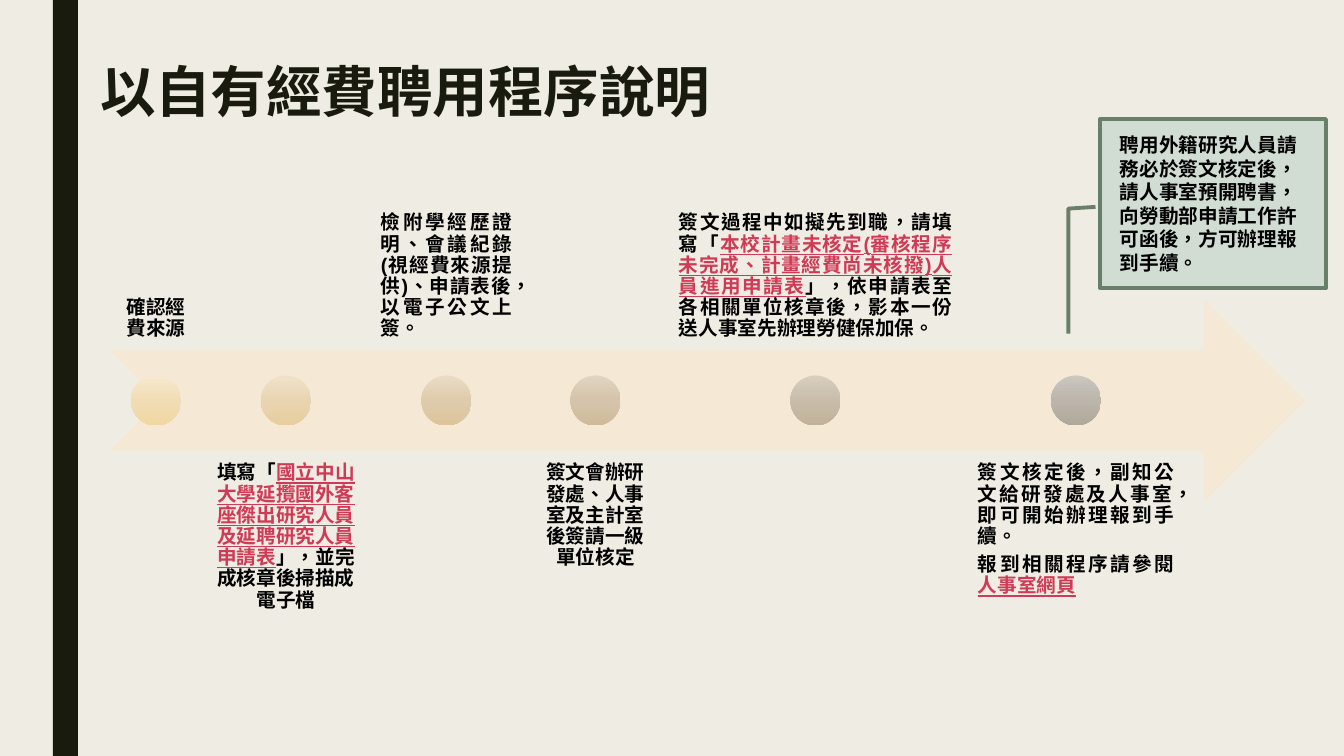
"""Builds a slide with a six-step hiring timeline and a callout."""
from copy import deepcopy

from pptx import Presentation
from pptx import util as u
from pptx.dml.color import RGBColor
from pptx.enum import lang, shapes, text

TITLE = "以自有經費聘用程序說明"
NOTE = "聘用外籍研究人員請務必於簽文核定後，請人事室預開聘書，向勞動部申請工作許可函後，方可辦理報到手續。"
DARK, BLACK, RED = "191B0E", "000000", "D13A55"
MID, FULL = text.PP_ALIGN.CENTER, text.PP_ALIGN.JUSTIFY
TOP, LOW = text.MSO_ANCHOR.TOP, text.MSO_ANCHOR.BOTTOM

# width, alignment, dot gradient, paragraphs of (words, is red)
STEPS = [
    (92, MID, ("F7E9D0", "F1DCB4", "F1D7A3"), [[("確認經費來源", False)]]),
    (160, MID, ("F0E2CA", "E9D4B0", "E8CD9E"), [[
        ("填寫「", False),
        ("國立中山大學延攬國外客座傑出研究人員及延聘研究人員申請表", True),
        ("」，並完成核章後掃描成電子檔", False)]]),
    (153, FULL, ("E9DBC6", "DFCCAD", "DCC49B"), [[
        ("檢附學經歷證明、會議紀錄(視經費來源提供)、申請表後，以電子公文上簽。", False)]]),
    (137, MID, ("E0D4C2", "D5C4AB", "CFBB99"), [[
        ("簽文會辦研發處、人事室及主計室後簽請一級單位核定", False)]]),
    (295, FULL, ("D7CEC0", "C9BDAA", "C1B198"), [[
        ("簽文過程中如擬先到職，請填寫「", False),
        ("本校計畫未核定(審核程序未完成、計畫經費尚未核撥)人員進用申請表", True),
        ("」，依申請表至各相關單位核章後，影本一份送人事室先辦理勞健保加保。", False)]]),
    (218, FULL, ("CBC7BF", "BBB5AB", "B0A89A"), [
        [("簽文核定後，副知公文給研發處及人事室，即可開始辦理報到手續。", False)],
        [("報到相關程序請參閱", False), ("人事室網頁", True)]]),
]
LEFT, GAP, TALL, DOT = 110, 4, 201, 50
ARROW_Y, HIGH_Y, LOW_Y = 300, 150, 452


def px(n):
    return u.Emu(round(n * 914400 / 100.8))


def rgb(code):
    return RGBColor.from_string(code)


def add_run(para, words, size, font, color, under=False):
    run = para.add_run()
    run.text = words
    f = run.font
    f.size, f.name, f.bold = u.Pt(size), font, True
    f.color.rgb = rgb(color)
    f.language_id = lang.MSO_LANGUAGE_ID.TRADITIONAL_CHINESE
    if under:
        f.underline = True


def add_part(slide, kind, box, fill=None):
    part = slide.shapes.add_shape(kind, *map(px, box))
    part.shadow.inherit = False
    part.line.fill.background()
    if fill:
        part.fill.solid()
        part.fill.fore_color.rgb = rgb(fill)
    return part


def add_dot(slide, x, y, tones):
    dot = add_part(slide, shapes.MSO_SHAPE.OVAL, (x, y, DOT, DOT))
    dot.fill.gradient()
    dot.fill.gradient_angle = 270
    first = dot.fill._fill._gradFill.gsLst[0]
    first.addnext(deepcopy(first))
    for stop, tone, pos in zip(dot.fill.gradient_stops, tones, (0, 0.5, 1)):
        stop.color.rgb = rgb(tone)
        stop.position = pos


def add_step(slide, box, anchor, align, paras):
    frame = slide.shapes.add_textbox(*map(px, box)).text_frame
    frame.word_wrap = True
    frame.vertical_anchor = anchor
    frame.margin_left = frame.margin_right = px(11)
    frame.margin_top = frame.margin_bottom = px(11)
    for i, runs in enumerate(paras):
        para = frame.add_paragraph() if i else frame.paragraphs[0]
        para.alignment, para.line_spacing = align, 0.9
        para.space_after = u.Pt(5)
        for words, red in runs:
            add_run(para, words, 14, "Arial", RED if red else BLACK, red)


def add_title(slide):
    title = slide.shapes.title
    title.left, title.top, title.width, title.height = map(px, (90, 60, 696, 90))
    frame = title.text_frame
    frame.word_wrap = True
    frame.auto_size = text.MSO_AUTO_SIZE.NONE
    frame.vertical_anchor = TOP
    para = frame.paragraphs[0]
    para.alignment, para.line_spacing = text.PP_ALIGN.LEFT, 0.89
    add_run(para, TITLE, 39.6, "Roboto", DARK)


def add_note(slide):
    note = add_part(slide, shapes.MSO_SHAPE.LINE_CALLOUT_2, (1100, 119, 226, 169), "D1DDD2")
    for i, v in enumerate((0.52, -0.02, 0.53, -0.14, 1.27, -0.14)):
        note.adjustments[i] = v
    note.line.color.rgb = rgb("687F69")
    note.line.width = u.Pt(2.75)
    frame = note.text_frame
    frame.word_wrap = True
    frame.margin_left = px(20)
    frame.vertical_anchor = text.MSO_ANCHOR.MIDDLE
    para = frame.paragraphs[0]
    para.alignment = text.PP_ALIGN.LEFT
    add_run(para, NOTE, 14, "Roboto", BLACK)


def main():
    prs = Presentation()
    prs.slide_width, prs.slide_height = px(1344), px(756)
    slide = prs.slides.add_slide(prs.slide_layouts[5])
    slide.background.fill.solid()
    slide.background.fill.fore_color.rgb = rgb("EFEDE3")
    add_part(slide, shapes.MSO_SHAPE.RECTANGLE, (53, 0, 25, 756), DARK)
    add_title(slide)
    add_part(slide, shapes.MSO_SHAPE.NOTCHED_RIGHT_ARROW, (LEFT, ARROW_Y, 1195, TALL), "F5E8D4")
    x = LEFT
    for i, (wide, align, tones, paras) in enumerate(STEPS):
        y, anchor = (LOW_Y, TOP) if i % 2 else (HIGH_Y, LOW)
        add_step(slide, (x, y, wide, TALL), anchor, align, paras)
        add_dot(slide, x + (wide - DOT) / 2, ARROW_Y + (TALL - DOT) / 2, tones)
        x += wide + GAP
    add_note(slide)
    prs.save("out.pptx")


if __name__ == "__main__":
    main()
